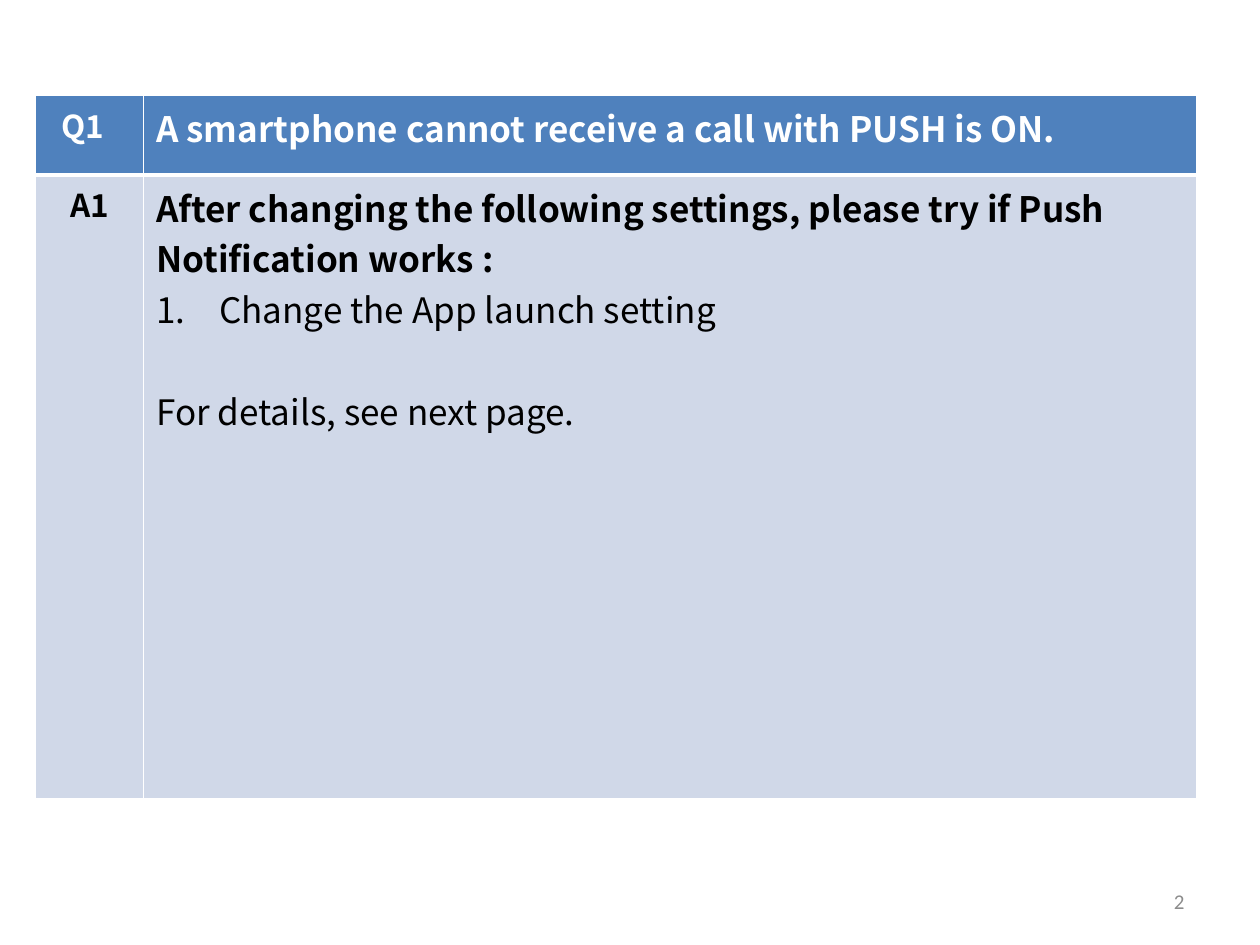
from dataclasses import dataclass

from lxml.etree import SubElement
from pptx import Presentation
from pptx.dml.color import RGBColor
from pptx.enum.text import MSO_ANCHOR as Anchor, PP_ALIGN as Align
from pptx.oxml.ns import qn
from pptx.util import Inches, Pt

WHITE, BLACK, GRAY = "FFFFFF", "000000", "8C8C8C"
HEADER_BLUE, ANSWER_BLUE = "4F81BD", "D0D8E8"
TABLE_FONT = "Noto Sans CJK JP"


@dataclass
class Line:
    text: str
    bold: bool = True
    numbered: bool = False
    space_before: float = 0


@dataclass
class Entry:
    label: str
    lines: list[Line]
    fill: str
    color: str
    height: float
    top_border: float
    bottom_border: float
    label_margin: float = 0.1


ENTRIES = [
    Entry("Q1", [Line("A smartphone cannot receive a call with PUSH is ON.")],
          HEADER_BLUE, WHITE, 0.63, 1, 3, label_margin=0.21),
    Entry("A1", [
        Line("After changing the following settings, please try if Push "
             "Notification works :"),
        Line("Change the App launch setting", bold=False, numbered=True),
        Line("For details, see next page.", bold=False, space_before=29),
    ], ANSWER_BLUE, BLACK, 4.95, 3, 1),
]


def rgb(hex_color: str) -> RGBColor:
    return RGBColor.from_string(hex_color)


def write(paragraph, text: str, *, size: float, color: str, font: str = TABLE_FONT,
          bold: bool = False, align=Align.LEFT, space_before: float = 0) -> None:
    paragraph.alignment = align
    if space_before:
        paragraph.space_before = Pt(space_before)
    run = paragraph.add_run()
    run.text = text
    run.font.size = Pt(size)
    run.font.bold = bold
    run.font.color.rgb = rgb(color)
    run.font.name = font
    SubElement(run.font._element, qn("a:ea"), typeface=font)


def number(paragraph, indent: float) -> None:
    """Give the paragraph an automatic number and a hanging indent."""
    properties = paragraph._p.get_or_add_pPr()
    properties.set("marL", str(Inches(indent)))
    properties.set("indent", str(-Inches(indent)))
    SubElement(properties, qn("a:buFont"), typeface="+mj-lt")
    SubElement(properties, qn("a:buAutoNum"), type="arabicPeriod")


def style_cell(cell, entry: Entry) -> None:
    """Fill the cell and draw its white borders, which precede the fill in XML."""
    cell.fill.solid()
    cell.fill.fore_color.rgb = rgb(entry.fill)
    properties = cell._tc.get_or_add_tcPr()
    widths = {"L": 1, "R": 1, "T": entry.top_border, "B": entry.bottom_border}
    for position, (side, width) in enumerate(widths.items()):
        border = SubElement(properties, qn(f"a:ln{side}"), w=str(Pt(width)))
        SubElement(SubElement(border, qn("a:solidFill")), qn("a:srgbClr"), val=WHITE)
        properties.insert(position, border)


def add_entries(slide, entries: list[Entry]) -> None:
    table = slide.shapes.add_table(
        len(entries), 2, Inches(0.28), Inches(0.76), Inches(9.21),
        Inches(sum(entry.height for entry in entries))).table
    table.horz_banding = False
    for column, width in zip(table.columns, (0.86, 8.36)):
        column.width = Inches(width)
    for row, entry in zip(table.rows, entries):
        row.height = Inches(entry.height)
        label, content = row.cells
        for cell in (label, content):
            style_cell(cell, entry)
        label.margin_right = Inches(entry.label_margin)
        write(label.text_frame.paragraphs[0], entry.label, size=18,
              color=entry.color, bold=True, align=Align.CENTER)
        frame = content.text_frame
        for index, line in enumerate(entry.lines):
            paragraph = frame.add_paragraph() if index else frame.paragraphs[0]
            if line.numbered:
                number(paragraph, 0.5)
            write(paragraph, line.text, size=20, color=entry.color,
                  bold=line.bold, space_before=line.space_before)


def add_page_number(slide, page: str) -> None:
    frame = slide.shapes.add_textbox(
        Inches(7.17), Inches(6.95), Inches(2.33), Inches(0.4)).text_frame
    frame.word_wrap = True
    frame.vertical_anchor = Anchor.MIDDLE
    write(frame.paragraphs[0], page, size=12, color=GRAY, font="Calibri",
          align=Align.RIGHT)


def main() -> None:
    deck = Presentation()
    deck.slide_width, deck.slide_height = Inches(10), Inches(7.5)
    slide = deck.slides.add_slide(deck.slide_layouts[6])
    add_page_number(slide, "2")
    add_entries(slide, ENTRIES)
    deck.save("out.pptx")


if __name__ == "__main__":
    main()
